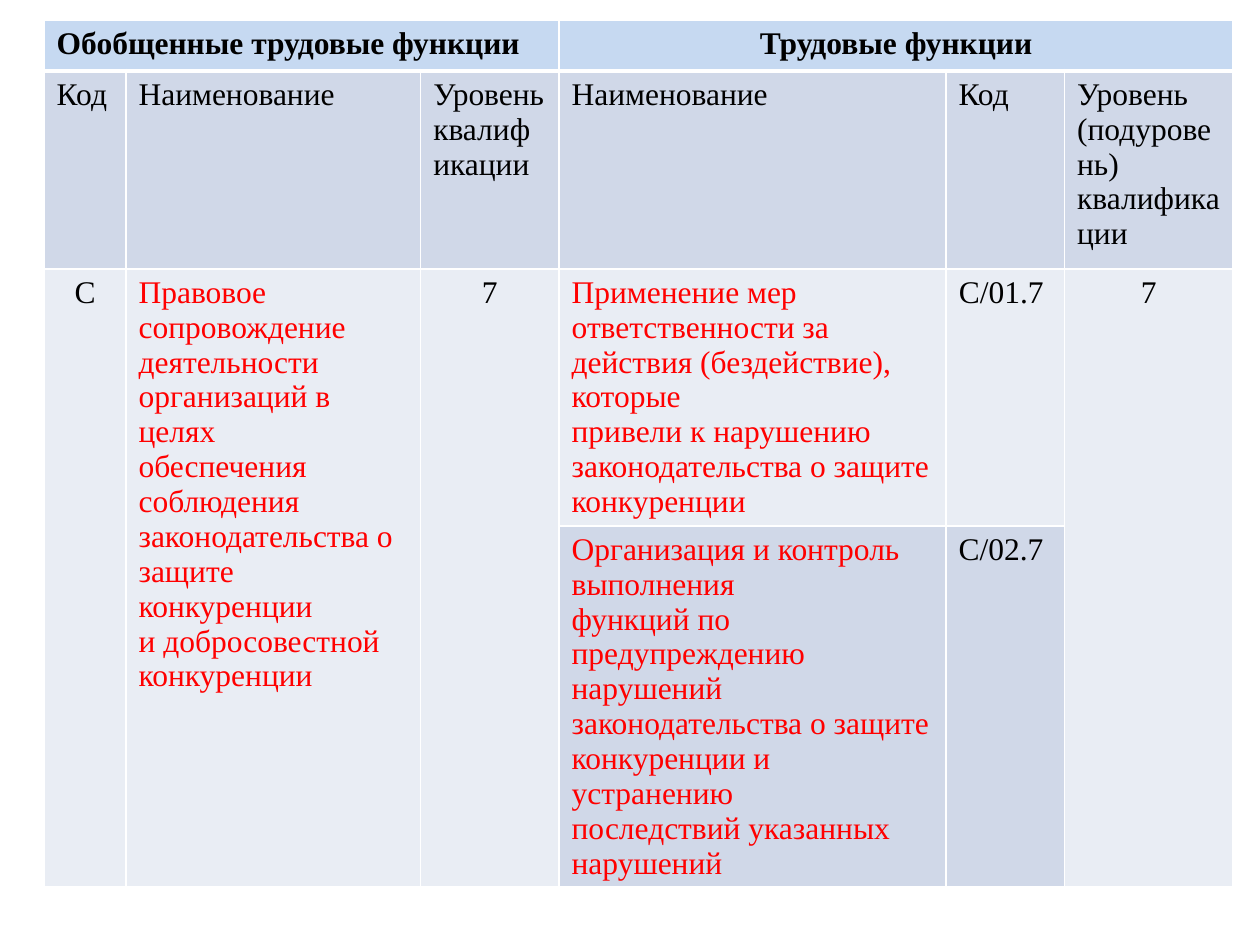
import pptx
import pptx.dml.color
import pptx.enum.text
import pptx.oxml.ns
import pptx.util
from dataclasses import dataclass
from lxml import etree

Cm = pptx.util.Cm
RGB = pptx.dml.color.RGBColor.from_string


@dataclass(frozen=True)
class Theme:
    font: str = "Times New Roman"
    size: int = 18
    ink: str = "000000"
    accent: str = "FF0000"
    head: str = "C6D9F1"
    dark: str = "D0D8E8"
    light: str = "E9EDF4"
    rule: str = "FFFFFF"
    thin: int = 1
    thick: int = 3


class Deck:
    def __init__(self, theme):
        self.theme = theme
        self.prs = pptx.Presentation()
        self.prs.slide_width, self.prs.slide_height = Cm(25.4), Cm(19.05)
        self.slide = self.prs.slides.add_slide(self.prs.slide_layouts[6])

    def table(self, left, top, cols, rows):
        frame = self.slide.shapes.add_table(
            len(rows), len(cols), Cm(left), Cm(top), Cm(sum(cols)), Cm(sum(rows)))
        grid = frame.table
        for col, width in zip(grid.columns, cols):
            col.width = Cm(width)
        for row, height in zip(grid.rows, rows):
            row.height = Cm(height)
        return grid

    def border(self, cell, side, width):
        props = cell._tc.get_or_add_tcPr()
        line = etree.SubElement(props, pptx.oxml.ns.qn(f"a:ln{side}"),
                                w=str(pptx.util.Pt(width)))
        fill = etree.SubElement(line, pptx.oxml.ns.qn("a:solidFill"))
        etree.SubElement(fill, pptx.oxml.ns.qn("a:srgbClr"), val=self.theme.rule)

    def paint(self, cell, fill, top, bottom):
        thin = self.theme.thin
        for side, width in zip("LRTB", (thin, thin, top, bottom)):
            self.border(cell, side, width)
        cell.fill.solid()
        cell.fill.fore_color.rgb = RGB(fill)

    def label(self, cell, lines, color=None, bold=False, center=False):
        frame = cell.text_frame
        for i, text in enumerate(lines):
            para = frame.add_paragraph() if i else frame.paragraphs[0]
            if center:
                para.alignment = pptx.enum.text.PP_ALIGN.CENTER
            run = para.add_run()
            run.text = text
            run.font.name = self.theme.font
            run.font.size = pptx.util.Pt(self.theme.size)
            run.font.bold = bold
            run.font.color.rgb = RGB(color or self.theme.ink)


GROUP = ["Правовое", "сопровождение", "деятельности", "организаций в целях",
         "обеспечения", "соблюдения", "законодательства о",
         "защите конкуренции", "и добросовестной", "конкуренции"]
APPLY = ["Применение мер ответственности за", "действия (бездействие), которые",
         "привели к нарушению", "законодательства о защите", "конкуренции"]
CONTROL = ["Организация и контроль выполнения", "функций по предупреждению",
           "нарушений законодательства о защите", "конкуренции и устранению",
           "последствий указанных нарушений"]
TITLES = ["Код", "Наименование", "Уровень квалификации",
          "Наименование", "Код", "Уровень (подуровень) квалификации"]


def main():
    look = Theme()
    deck = Deck(look)
    grid = deck.table(0.89, 0.41, cols=[1.65, 5.94, 2.79, 7.8, 2.39, 3.4],
                      rows=[1.02, 3.99, 5.18, 7.26])

    # Fills and rules, with a thick rule under the header
    for r, fill in enumerate([look.head, look.dark, look.light, look.dark]):
        for c in range(len(TITLES)):
            deck.paint(grid.cell(r, c), fill,
                       top=look.thick if r == 1 else look.thin,
                       bottom=look.thick if r == 0 else look.thin)

    # Merged cells
    for c in (0, 3):
        grid.cell(0, c).merge(grid.cell(0, c + 2))
    for c in (0, 1, 2, 5):
        grid.cell(2, c).merge(grid.cell(3, c))

    # Header and column titles
    deck.label(grid.cell(0, 0), ["Обобщенные трудовые функции"], bold=True)
    deck.label(grid.cell(0, 3), ["Трудовые функции"], bold=True, center=True)
    for c, title in enumerate(TITLES):
        deck.label(grid.cell(1, c), [title])

    # Codes and levels
    for r, c, text in [(2, 0, "С"), (2, 2, "7"), (2, 4, "С/01.7 "), (2, 5, "7")]:
        deck.label(grid.cell(r, c), [text], center=True)
    deck.label(grid.cell(3, 4), ["С/02.7"])

    # Names of the functions
    for r, c, lines in [(2, 1, GROUP), (2, 3, APPLY), (3, 3, CONTROL)]:
        deck.label(grid.cell(r, c), lines, color=look.accent)

    deck.prs.save("out.pptx")


if __name__ == "__main__":
    main()
